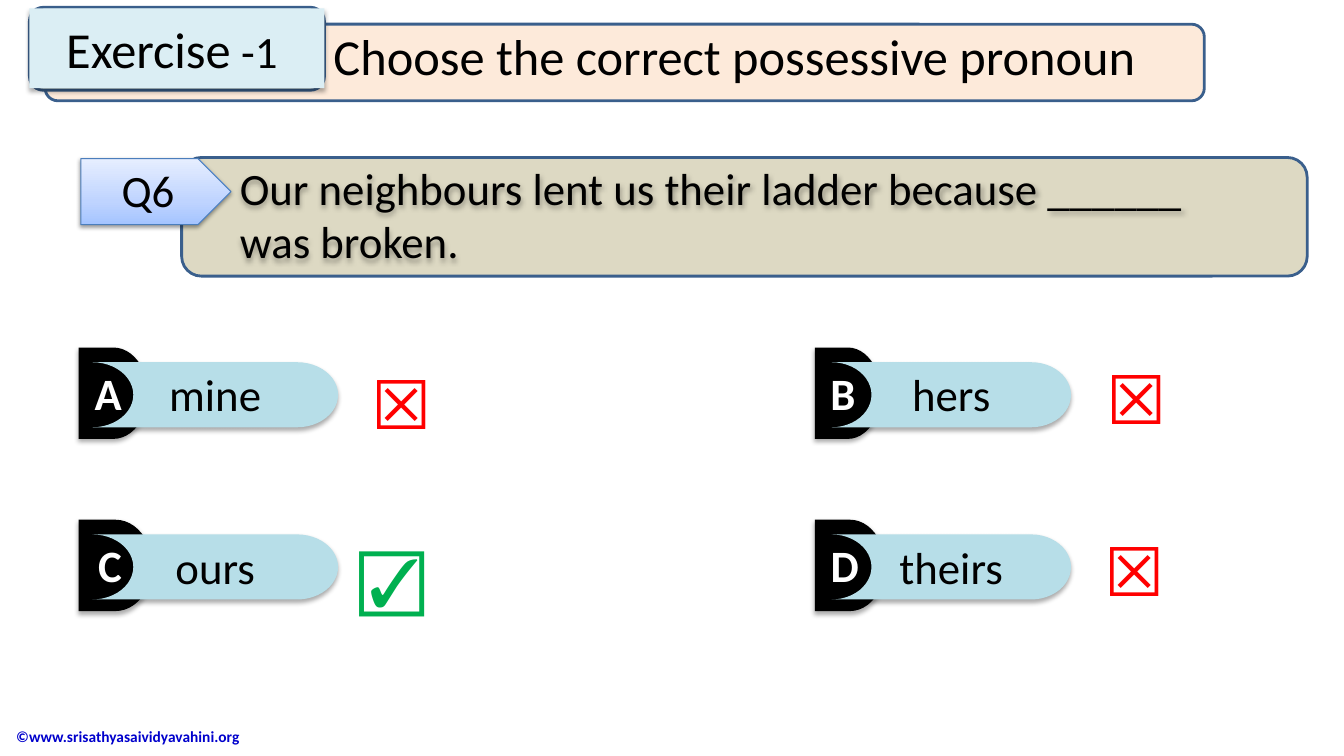
from pptx import Presentation
from pptx.dml.color import RGBColor
from pptx.enum.shapes import MSO_SHAPE as SHAPE
from pptx.enum.text import MSO_ANCHOR as ANCHOR, MSO_AUTO_SIZE as FIT, PP_ALIGN as ALIGN
from pptx.oxml import parse_xml
from pptx.oxml.ns import nsdecls, qn
from pptx.util import Pt

PX = 9525
BLACK = RGBColor(0x00, 0x00, 0x00)
WHITE = RGBColor(0xFF, 0xFF, 0xFF)
NAVY = RGBColor(0x3A, 0x5F, 0x8C)
BLUE = RGBColor(0x4B, 0x7E, 0xBC)
LINK = RGBColor(0x00, 0x00, 0xCC)
TAN = RGBColor(0xDD, 0xD9, 0xC3)
PEACH = RGBColor(0xFD, 0xEA, 0xDA)
ICE = RGBColor(0xDB, 0xEE, 0xF4)
AQUA = RGBColor(0xB7, 0xDE, 0xE8)
GREEN = RGBColor(0x00, 0xB0, 0x50)
RED = RGBColor(0xFF, 0x00, 0x00)

deck = Presentation()
deck.slide_width, deck.slide_height = 1280 * PX, 720 * PX
slide = deck.slides.add_slide(deck.slide_layouts[5])
shapes = slide.shapes


def draw(kind, *box, fill=None, line=None, width=2, shade=None):
    """Add a preset shape, or a text box if kind is None."""
    box = [n * PX for n in box]
    item = shapes.add_shape(kind, *box) if kind else shapes.add_textbox(*box)
    if fill is not None:
        item.fill.solid()
        item.fill.fore_color.rgb = fill
    if line is not None:
        item.line.color.rgb = line
        item.line.width = Pt(width)
    else:
        item.line.fill.background()
    item.shadow.inherit = False
    if shade:
        alpha, blur, dist = shade
        item.element.spPr.find(qn("a:effectLst")).append(parse_xml(
            f'<a:outerShdw {nsdecls("a")} blurRad="{Pt(blur)}" dist="{Pt(dist)}" '
            f'dir="5400000" rotWithShape="0"><a:srgbClr val="000000">'
            f'<a:alpha val="{alpha * 1000}"/></a:srgbClr></a:outerShdw>'))
    return item


def write(item, *runs, size=32, color=BLACK, bold=False, align=ALIGN.CENTER,
          anchor=ANCHOR.TOP, wrap=True):
    """Fill a shape with one paragraph; a run is text or (text, size)."""
    frame = item.text_frame
    frame.auto_size = FIT.NONE
    frame.word_wrap = wrap
    frame.vertical_anchor = anchor
    para = frame.paragraphs[0]
    para.alignment = align
    for part in runs:
        text, points = part if isinstance(part, tuple) else (part, size)
        run = para.add_run()
        run.text = text
        font = run.font
        font.name, font.size, font.bold = "Calibri", Pt(points), bold
        font.color.rgb = color


SOFT = (32, 3.5, 2.2)

# Copyright line
foot = draw(None, 6, 682, 339, 39)
write(foot, "©www.srisathyasaividyavahini.org", size=11, color=LINK, bold=True,
      align=ALIGN.LEFT, anchor=ANCHOR.MIDDLE)

# Question
draw(SHAPE.FLOWCHART_ALTERNATE_PROCESS, 173, 150, 1072, 113, fill=TAN, line=NAVY)
ask = draw(None, 219, 148, 956, 113, shade=SOFT)
write(ask, "Our neighbours lent us their ladder because ______ was broken.",
      align=ALIGN.LEFT)
tag = draw(SHAPE.PENTAGON, 77, 151, 143, 63, line=BLUE, width=0.75,
           shade=(38, 3.1, 1.6))
stops = "".join(f'<a:gs pos="{pos}000"><a:srgbClr val="{tint}"/></a:gs>'
                for pos, tint in ((0, "A4C4FF"), (35, "BFD4FF"), (100, "E6EEFF")))
tag.element.spPr.find(qn("a:prstGeom")).addnext(parse_xml(
    f'<a:gradFill {nsdecls("a")} rotWithShape="1"><a:gsLst>{stops}</a:gsLst>'
    '<a:lin ang="16200000" scaled="0"/></a:gradFill>'))
write(draw(None, 93, 150, 96, 61), "Q6")

# Answers: letter, word, column, row, tab width
COLS = ((75, 88, 234), (776, 792, 228))
ROWS = (331, 495)
for letter, word, col, row, wide in (("A", "mine", 0, 0, 66), ("B", "hers", 1, 0, 63),
                                     ("C", "ours", 0, 1, 70), ("D", "theirs", 1, 1, 67)):
    left, start, span = COLS[col]
    top = ROWS[row]
    tab = draw(SHAPE.FLOWCHART_DELAY, left, top, wide, 87, fill=BLACK, shade=SOFT)
    write(tab, letter, color=WHITE, bold=True)
    pill = draw(SHAPE.FLOWCHART_STORED_DATA, start, top + 14, span, 62,
                fill=AQUA, shade=SOFT)
    pill.element.spPr.find(qn("a:xfrm")).set("flipH", "1")
    write(pill, word)

# Heading
bar = draw(SHAPE.FLOWCHART_ALTERNATE_PROCESS, 43, 23, 1104, 73, fill=PEACH, line=NAVY)
draw(SHAPE.ROUNDED_RECTANGLE, 28, 7, 281, 79, fill=ICE, line=NAVY)
badge = draw(SHAPE.RECTANGLE, 28, 8, 281, 76, fill=ICE, shade=SOFT)
write(badge, "Exercise", (" -1 ", 32), size=36, anchor=ANCHOR.MIDDLE)
title = shapes.title
title.left, title.top, title.width, title.height = [n * PX for n in (308, 19, 853, 76)]
write(title, "Choose the correct possessive pronoun", size=36, align=ALIGN.LEFT,
      wrap=False)
bar.element.addnext(title.element)

# Marks
for sign, color, left, top, wide in (("☑", GREEN, 331, 506, 84), ("☒", RED, 1042, 499, 63),
                                     ("☒", RED, 1044, 336, 60), ("☒", RED, 344, 340, 60)):
    write(draw(None, left, top, wide, 88), sign, size=48, color=color, bold=True)

deck.save("out.pptx")
